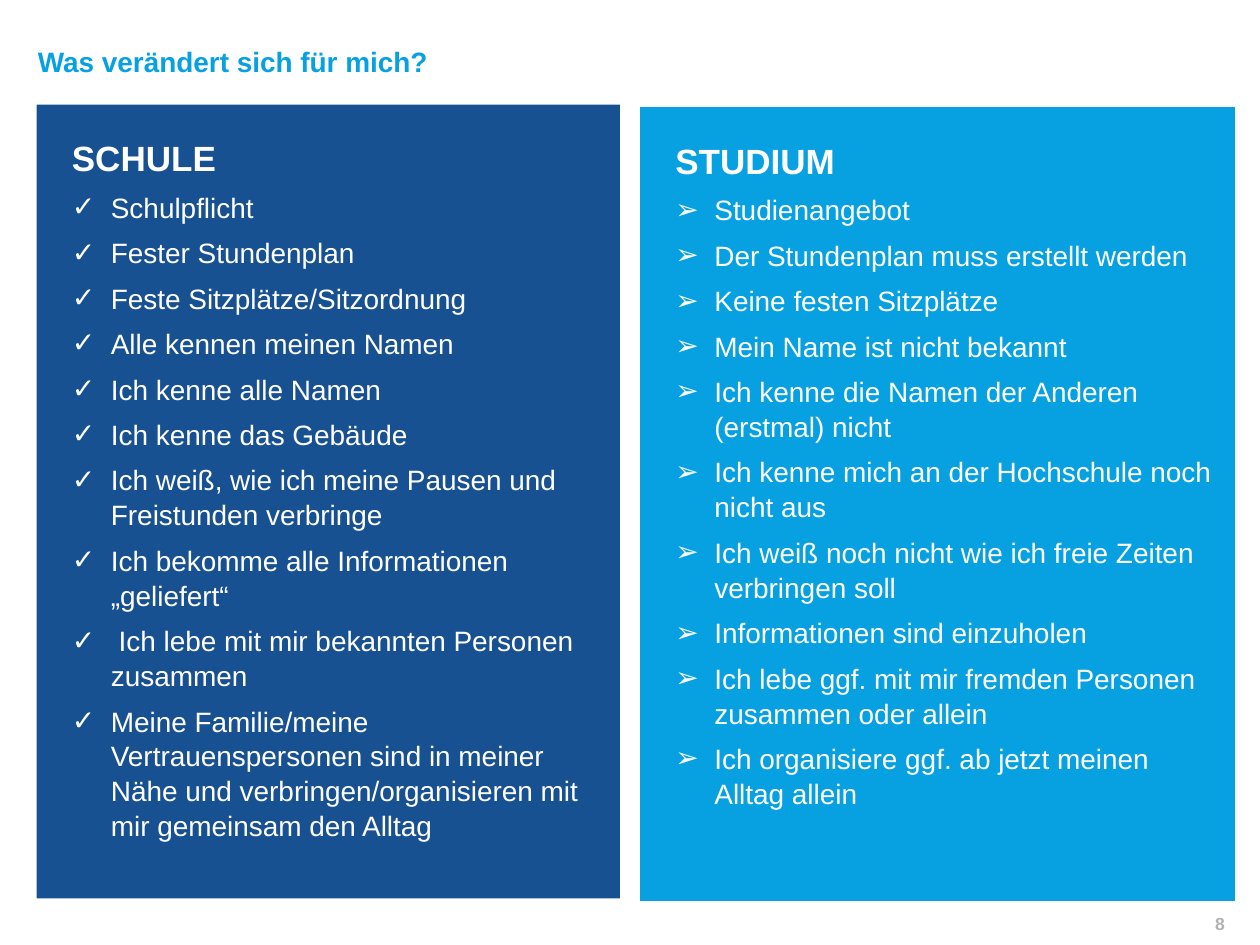
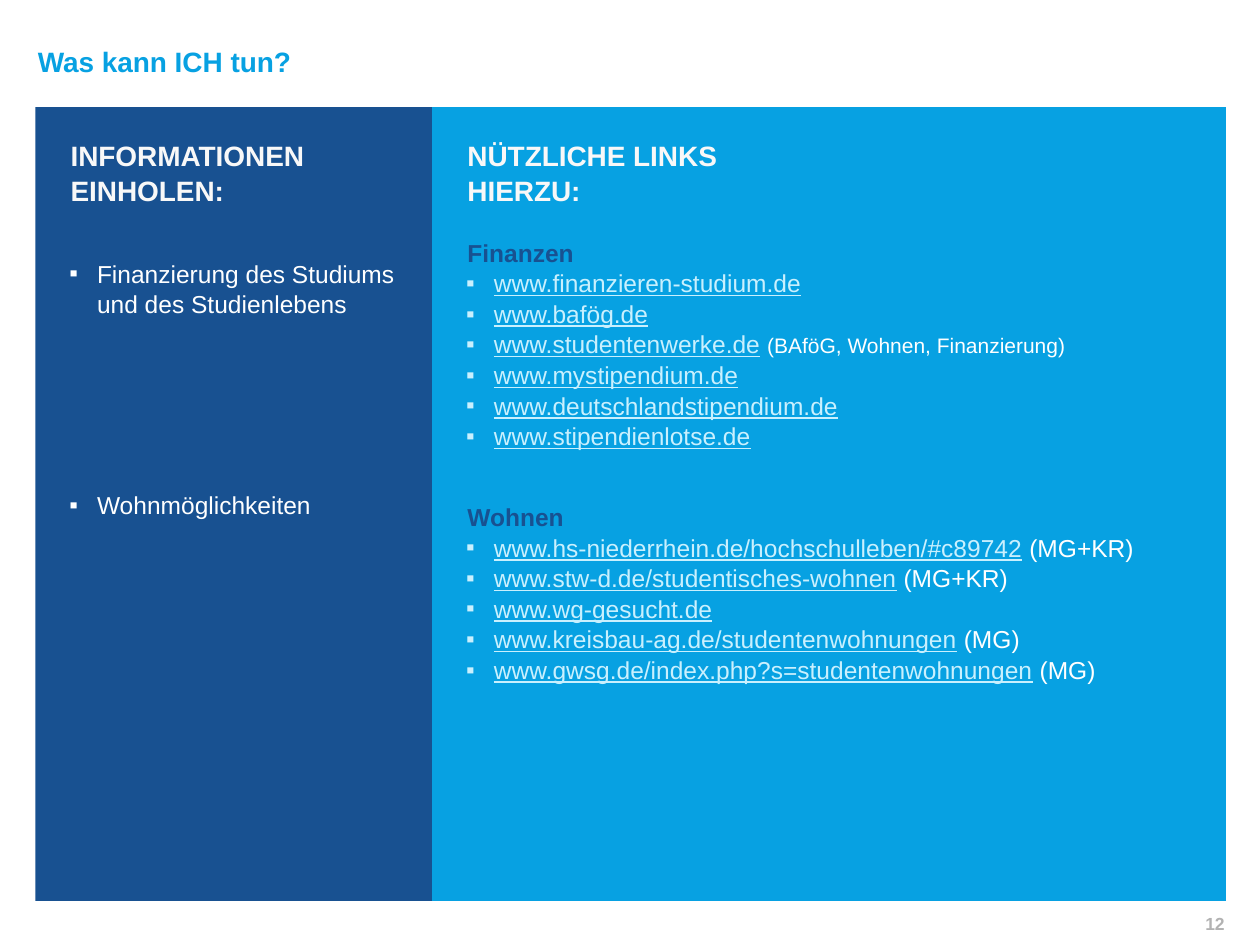
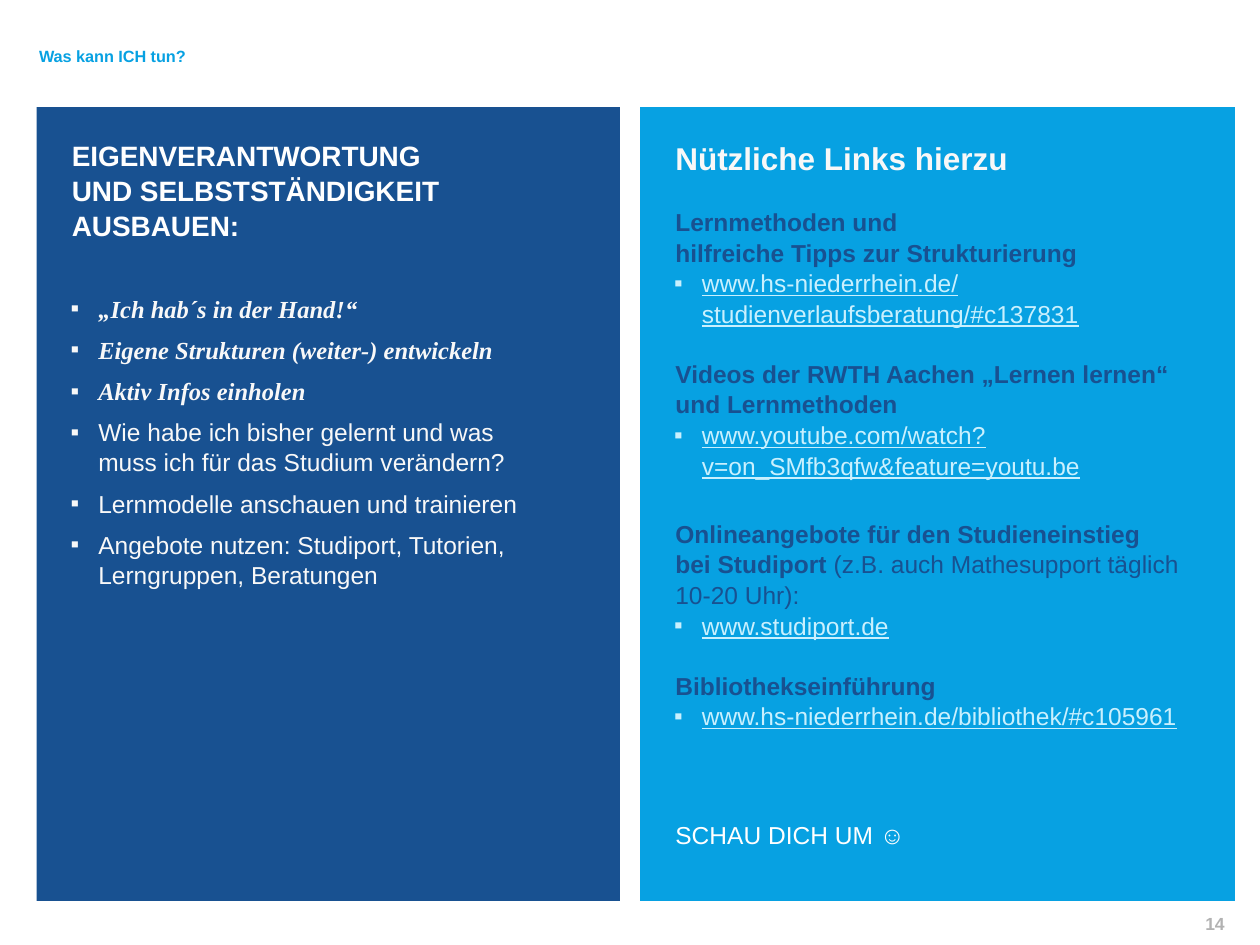
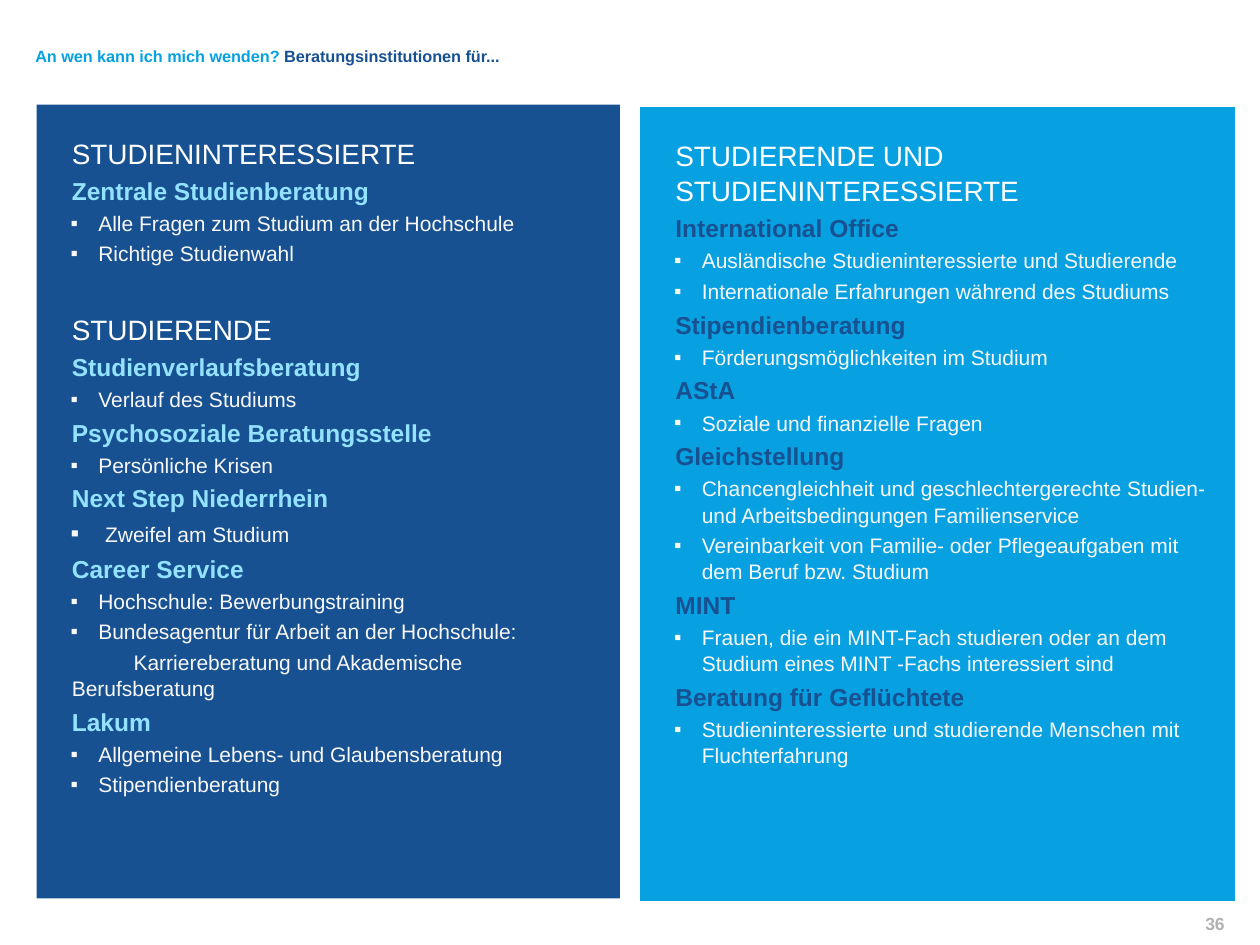
from dataclasses import dataclass, replace

from lxml.etree import SubElement
from pptx import Presentation
from pptx.dml.color import RGBColor
from pptx.enum.text import MSO_ANCHOR as Anchor, MSO_AUTO_SIZE as AutoSize, PP_ALIGN as Align
from pptx.oxml.ns import qn
from pptx.util import Inches, Pt

DARK, BLUE, SKY, ICE = "185191", "07A1E2", "93E2FF", "C9F0FE"
WHITE, PALE, GREY = "FFFFFF", "F8F8F8", "B2B2B2"


@dataclass(frozen=True)
class Style:
    size: float
    color: str = WHITE
    bold: bool = False
    italic: bool = False
    underline: bool = False
    font: str = "Arial"
    indent: float = 0.28
    first: float = 0
    bullet: str = ""
    before: float = 0


HEAD = Style(20, bold=True)
CHECK = Style(16, indent=0.59, first=-0.31, bullet="✓", before=6)
ARROW = replace(CHECK, bullet="➢")
CAPS = Style(16, bold=True)
PALE_CAPS = replace(CAPS, color=PALE)
TOPIC = Style(14, DARK, bold=True)
TOPIC_NOTE = replace(TOPIC, bold=False)
POINT = Style(14, indent=0.49, first=-0.22, bullet="▪", before=6)
PALE_POINT = replace(POINT, color=PALE)
MOTTO = replace(PALE_POINT, bold=True, italic=True, font="Times New Roman")
LINK = replace(POINT, color=ICE, underline=True, before=0)
NOTE = Style(14)
SMALL_NOTE = Style(12)
GROUP = Style(16, before=3.2)
OFFICE = replace(TOPIC, before=2.8)
SKY_OFFICE = replace(OFFICE, color=SKY)
TASK = replace(PALE_POINT, size=12, before=2.4)
TASK_MORE = replace(TASK, first=0.49, indent=0.28, bullet="")

SCHOOL = [
    (HEAD, "SCHULE"),
    (CHECK, "Schulpflicht"),
    (CHECK, "Fester Stundenplan"),
    (CHECK, "Feste Sitzplätze/Sitzordnung"),
    (CHECK, "Alle kennen meinen Namen"),
    (CHECK, "Ich kenne alle Namen"),
    (CHECK, "Ich kenne das Gebäude"),
    (CHECK, "Ich weiß, wie ich meine Pausen und Freistunden verbringe"),
    (CHECK, "Ich bekomme alle Informationen „geliefert“"),
    (CHECK, " Ich lebe mit mir bekannten Personen zusammen"),
    (CHECK, "Meine Familie/meine Vertrauenspersonen sind in meiner Nähe und "
            "verbringen/organisieren mit mir gemeinsam den Alltag"),
]
STUDIES = [
    (HEAD, "STUDIUM"),
    (ARROW, "Studienangebot"),
    (ARROW, "Der Stundenplan muss erstellt werden"),
    (ARROW, "Keine festen Sitzplätze"),
    (ARROW, "Mein Name ist nicht bekannt"),
    (ARROW, "Ich kenne die Namen der Anderen (erstmal) nicht"),
    (ARROW, "Ich kenne mich an der Hochschule noch nicht aus"),
    (ARROW, "Ich weiß noch nicht wie ich freie Zeiten verbringen soll"),
    (ARROW, "Informationen sind einzuholen"),
    (ARROW, "Ich lebe ggf. mit mir fremden Personen zusammen oder allein"),
    (ARROW, "Ich organisiere ggf. ab jetzt meinen Alltag allein"),
]
INFORMATION = [
    (PALE_CAPS, "INFORMATIONEN EINHOLEN:"),
    (POINT, "Finanzierung des Studiums und des Studienlebens", 28.8),
    (POINT, "Wohnmöglichkeiten", 97.2),
]
INFORMATION_LINKS = [
    (PALE_CAPS, "NÜTZLICHE LINKS"),
    (PALE_CAPS, "HIERZU:"),
    (TOPIC, "Finanzen", 16.8),
    (LINK, "www.finanzieren-studium.de"),
    (LINK, "www.bafög.de"),
    (LINK, [("www.studentenwerke.de", LINK), (" ", NOTE),
            ("(BAföG, Wohnen, Finanzierung)", SMALL_NOTE)]),
    (LINK, "www.mystipendium.de"),
    (LINK, "www.deutschlandstipendium.de"),
    (LINK, "www.stipendienlotse.de"),
    (TOPIC, "Wohnen", 28.8),
    (LINK, [("www.hs-niederrhein.de/hochschulleben/#c89742", LINK), (" (MG+KR)", NOTE)]),
    (LINK, [("www.stw-d.de/studentisches-wohnen", LINK), (" (MG+KR)", NOTE)]),
    (LINK, "www.wg-gesucht.de"),
    (LINK, [("www.kreisbau-ag.de/studentenwohnungen", LINK), (" (MG)", NOTE)]),
    (LINK, [("www.gwsg.de/index.php?s=studentenwohnungen", LINK), (" (MG)", NOTE)]),
]
INDEPENDENCE = [
    (CAPS, "EIGENVERANTWORTUNG"),
    (CAPS, "UND SELBSTSTÄNDIGKEIT"),
    (CAPS, "AUSBAUEN:"),
    (MOTTO, "„Ich hab´s in der Hand!“", 28.8),
    (MOTTO, "Eigene Strukturen (weiter-) entwickeln"),
    (MOTTO, "Aktiv Infos einholen"),
    (PALE_POINT, "Wie habe ich bisher gelernt und was muss ich für das Studium verändern?"),
    (PALE_POINT, "Lernmodelle anschauen und trainieren"),
    (PALE_POINT, "Angebote nutzen: Studiport, Tutorien, Lerngruppen, Beratungen"),
]
INDEPENDENCE_LINKS = [
    (replace(PALE_CAPS, size=18), "Nützliche Links hierzu"),
    (TOPIC, "Lernmethoden und", 16.8),
    (TOPIC, "hilfreiche Tipps zur Strukturierung"),
    (LINK, "www.hs-niederrhein.de/ studienverlaufsberatung/#c137831"),
    (TOPIC, "Videos der RWTH Aachen „Lernen lernen“ und Lernmethoden", 16.8),
    (LINK, "www.youtube.com/watch?v=on_SMfb3qfw&feature=youtu.be"),
    (TOPIC, [("Onlineangebote für den Studieneinstieg bei Studiport ", TOPIC),
             ("(z.B. auch Mathesupport täglich 10-20 Uhr):", TOPIC_NOTE)], 21.6),
    (LINK, "www.studiport.de"),
    (TOPIC, "Bibliothekseinführung", 16.8),
    (LINK, "www.hs-niederrhein.de/bibliothek/#c105961"),
    (NOTE, "SCHAU DICH UM ☺", 50.4),
]
ADVICE = [
    (GROUP, "STUDIENINTERESSIERTE"),
    (SKY_OFFICE, "Zentrale Studienberatung"),
    (TASK, "Alle Fragen zum Studium an der Hochschule"),
    (TASK, "Richtige Studienwahl"),
    (GROUP, "STUDIERENDE", 25.5),
    (SKY_OFFICE, "Studienverlaufsberatung"),
    (TASK, "Verlauf des Studiums"),
    (SKY_OFFICE, "Psychosoziale Beratungsstelle"),
    (TASK, "Persönliche Krisen"),
    (SKY_OFFICE, "Next Step Niederrhein"),
    (TASK, [(" ", PALE_POINT), ("Zweifel am Studium", TASK)]),
    (SKY_OFFICE, "Career Service"),
    (TASK, "Hochschule: Bewerbungstraining"),
    (TASK, "Bundesagentur für Arbeit an der Hochschule:"),
    (TASK_MORE, "Karriereberatung und Akademische Berufsberatung"),
    (SKY_OFFICE, "Lakum"),
    (TASK, "Allgemeine Lebens- und Glaubensberatung"),
    (TASK, "Stipendienberatung"),
]
ADVICE_FOR_ALL = [
    (GROUP, "STUDIERENDE UND STUDIENINTERESSIERTE"),
    (OFFICE, "International Office"),
    (TASK, "Ausländische Studieninteressierte und Studierende"),
    (TASK, "Internationale Erfahrungen während des Studiums"),
    (OFFICE, "Stipendienberatung"),
    (TASK, "Förderungsmöglichkeiten im Studium"),
    (OFFICE, "AStA"),
    (TASK, "Soziale und finanzielle Fragen"),
    (OFFICE, "Gleichstellung"),
    (TASK, "Chancengleichheit und geschlechtergerechte Studien- und "
           "Arbeitsbedingungen Familienservice"),
    (TASK, "Vereinbarkeit von Familie- oder Pflegeaufgaben mit dem Beruf bzw. Studium"),
    (OFFICE, "MINT"),
    (TASK, "Frauen, die ein MINT-Fach studieren oder an dem Studium eines "
           "MINT -Fachs interessiert sind"),
    (OFFICE, "Beratung für Geflüchtete"),
    (TASK, "Studieninteressierte und studierende Menschen mit Fluchterfahrung"),
]

TITLE = Style(16, BLUE, bold=True)
SMALL_TITLE = replace(TITLE, size=9.3)
NUMBER = Style(10, GREY, bold=True)
TITLE_BOX, NUMBER_BOX = (0.2, 0.3, 6.18, 0.54), (8.15, 7.2, 1.57, 0.2)
LEFT, LEFT_RAISED = (0.29, 0.85, 4.63, 6.3), (0.29, 0.83, 4.63, 6.3)
RIGHT = (5.08, 0.85, 4.72, 6.3)
NARROW, WIDE = (0.28, 0.85, 3.15, 6.3), (3.43, 0.85, 6.3, 6.3)

PAGES = [
    dict(number=8, title=[("Was verändert sich für mich?", TITLE)], title_box=TITLE_BOX,
         panels=[(LEFT_RAISED, 0.1, SCHOOL), (RIGHT, 0.1, STUDIES)]),
    dict(number=12, title=[("Was kann ICH tun?", TITLE)], title_box=TITLE_BOX,
         panels=[(NARROW, 0.1, INFORMATION), (WIDE, 0.1, INFORMATION_LINKS)]),
    dict(number=14, title=[("Was kann ICH tun?", SMALL_TITLE)], title_box=(0.21, 0.32, 6.36, 0.3),
         panels=[(LEFT, 0.79, INDEPENDENCE), (RIGHT, 0.43, INDEPENDENCE_LINKS)]),
    dict(number=36, title=[("An wen kann ich mich wenden? ", SMALL_TITLE),
                           ("Beratungsinstitutionen für...", replace(SMALL_TITLE, color=DARK))],
         title_box=(0.18, 0.32, 7.19, 0.3),
         panels=[(LEFT_RAISED, 0.15, ADVICE), (RIGHT, 0.1, ADVICE_FOR_ALL)]),
]


def rgb(color):
    """Turn a hex string into a colour."""
    return RGBColor.from_string(color)


def place(box, at, margins):
    """Position a box and prepare its text frame."""
    box.left, box.top, box.width, box.height = map(Inches, at)
    frame = box.text_frame
    frame.word_wrap = True
    frame.auto_size = AutoSize.NONE
    frame.vertical_anchor = Anchor.TOP
    frame.margin_left, frame.margin_top, frame.margin_right, frame.margin_bottom = map(Inches, margins)
    return frame


def write(para, spans, align=Align.LEFT):
    """Fill a paragraph with styled spans."""
    para.alignment = align
    for text, style in spans:
        span = para.add_run()
        span.text = text
        font = span.font
        font.name, font.size, font.color.rgb = style.font, Pt(style.size), rgb(style.color)
        font.bold, font.italic, font.underline = style.bold, style.italic, style.underline


def set_bullet(para, style):
    """Set the indents and the bullet of a paragraph."""
    props = para._p.get_or_add_pPr()
    props.set("marL", str(Inches(style.indent)))
    props.set("indent", str(Inches(style.first)))
    if style.bullet:
        SubElement(props, qn("a:buFont"), typeface="Arial")
        SubElement(props, qn("a:buChar"), char=style.bullet)
    else:
        SubElement(props, qn("a:buNone"))


def fill_panel(box, at, right_margin, items, color):
    """Turn a body placeholder into a coloured panel with its list."""
    frame = place(box, at, (0, 0.24, right_margin, 0.05))
    box.fill.solid()
    box.fill.fore_color.rgb = rgb(color)
    for index, (style, text, *gap) in enumerate(items):
        para = frame.add_paragraph() if index else frame.paragraphs[0]
        set_bullet(para, style)
        para.line_spacing = 1.04
        para.space_before = Pt((gap[0] if gap else style.before) if index else 0)
        write(para, [(text, style)] if isinstance(text, str) else text)


def add_page(deck, number, title, title_box, panels):
    """Add one slide with title, two panels and page number."""
    page = deck.slides.add_slide(deck.slide_layouts.get_by_name("Two Content"))
    heading, *bodies = page.placeholders
    frame = place(heading, title_box, (0.1, 0.05, 0.1, 0.05))
    write(frame.paragraphs[0], title)
    for body, panel, color in zip(bodies, panels, (DARK, BLUE)):
        fill_panel(body, *panel, color)
    number_box = page.shapes.add_textbox(*map(Inches, NUMBER_BOX))
    frame = place(number_box, NUMBER_BOX, (0.1, 0.05, 0, 0.05))
    write(frame.paragraphs[0], [(str(number), NUMBER)], Align.RIGHT)


def main():
    """Build and save the deck."""
    deck = Presentation()
    deck.slide_width, deck.slide_height = Inches(10), Inches(7.5)
    for content in PAGES:
        add_page(deck, **content)
    deck.save("out.pptx")


if __name__ == "__main__":
    main()
